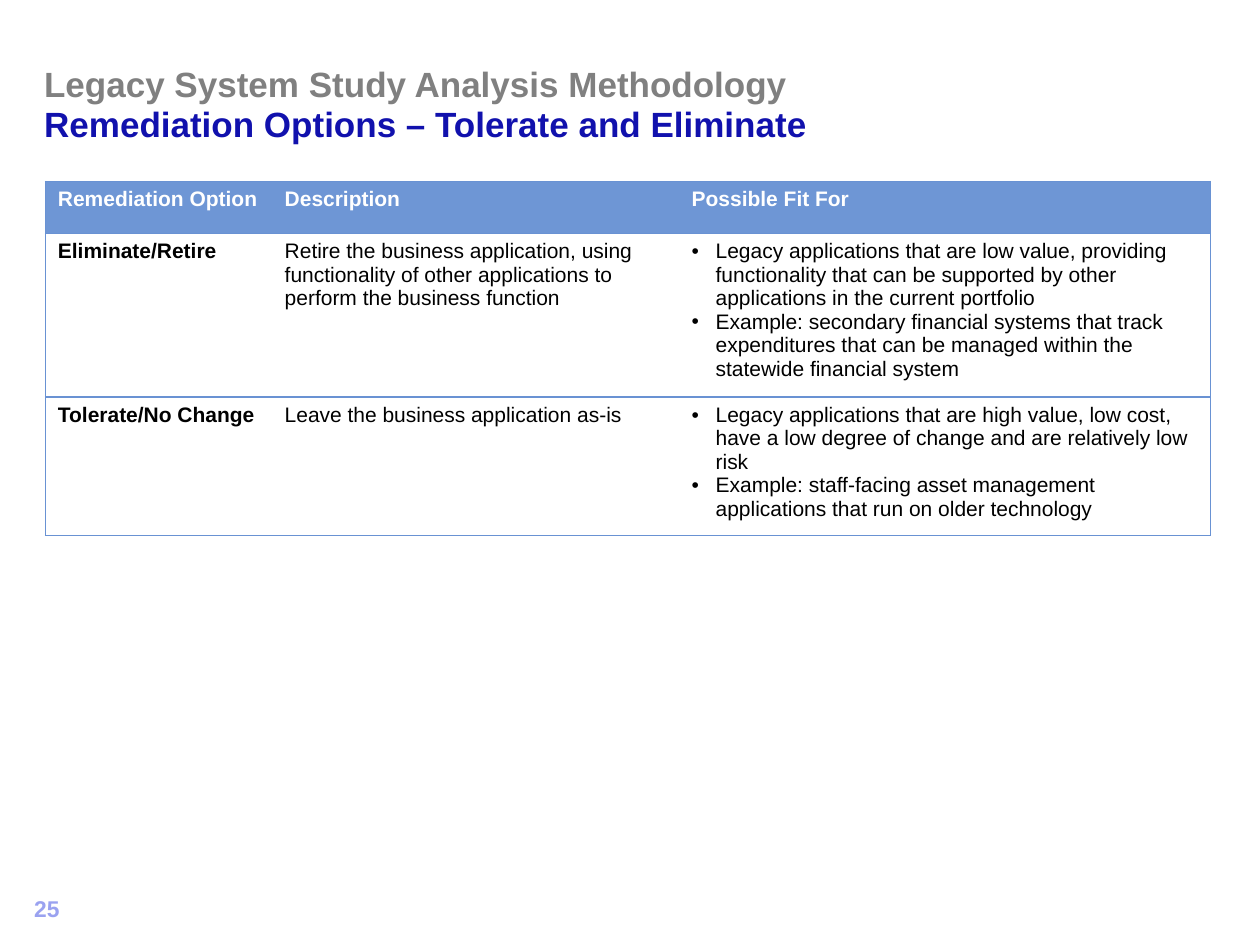
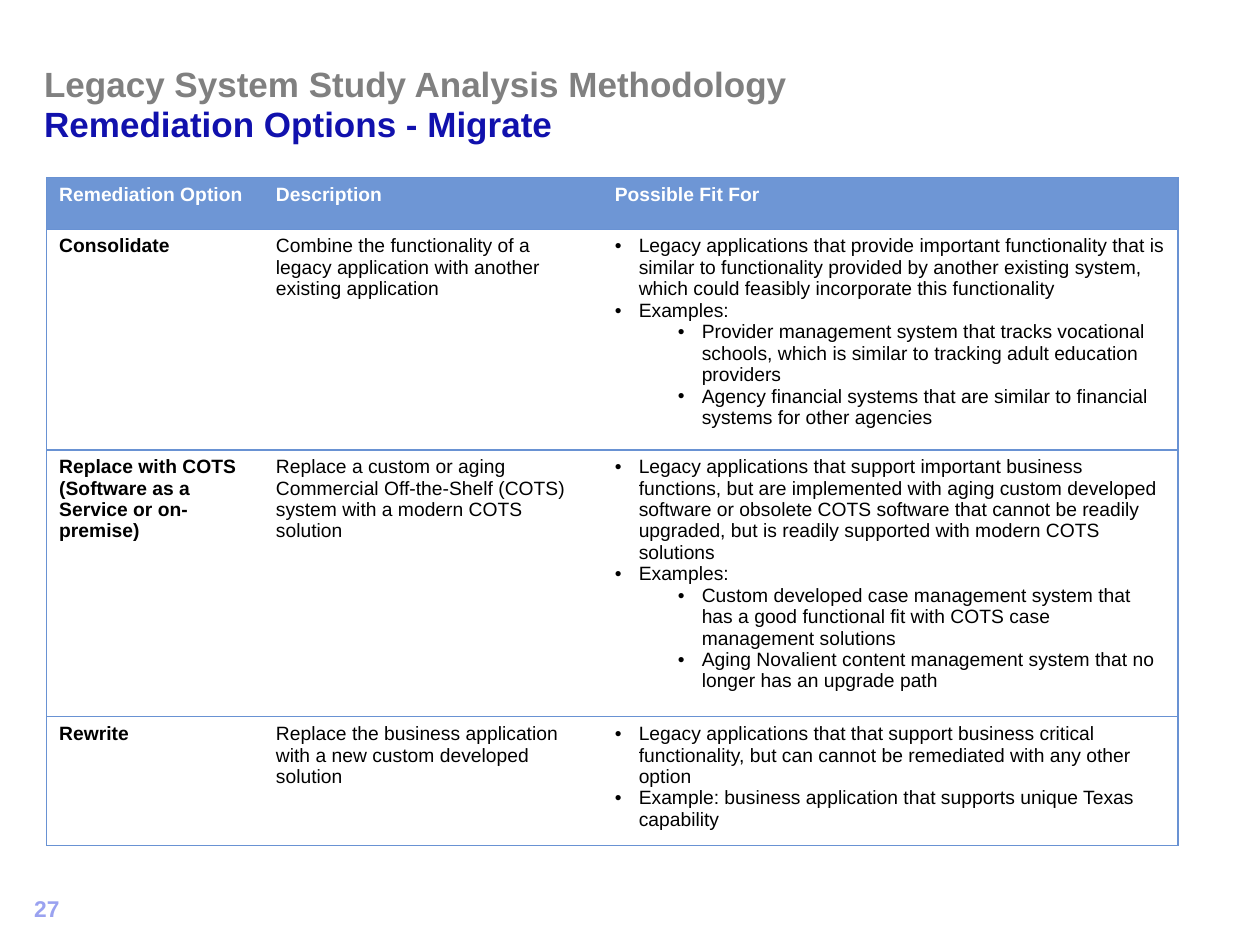
from lxml.etree import SubElement
from pptx import Presentation
from pptx.dml.color import RGBColor
from pptx.enum.text import MSO_ANCHOR, PP_ALIGN
from pptx.oxml.ns import qn
from pptx.util import Inches, Pt

FONT = "Arial"
GREY, NAVY, LILAC = "808080", "1111AD", "9AA2F0"
BAND, RULE, BLACK, WHITE = "6E96D5", "6992D3", "000000", "FFFFFF"
TOPIC = "Legacy System Study Analysis Methodology"
HEADS = ["Remediation Option", "Description", "Possible Fit For"]

# Each fit is a (level, text) pair.
KEEP_ROWS = [
    ("Eliminate/Retire",
     "Retire the business application, using functionality of other "
     "applications to perform the business function",
     [(0, "Legacy applications that are low value, providing functionality "
          "that can be supported by other applications in the current portfolio"),
      (0, "Example: secondary financial systems that track expenditures that "
          "can be managed within the statewide financial system")]),
    ("Tolerate/No Change",
     "Leave the business application as-is",
     [(0, "Legacy applications that are high value, low cost, have a low "
          "degree of change and are relatively low risk"),
      (0, "Example: staff-facing asset management applications that run on "
          "older technology")]),
]
MOVE_ROWS = [
    ("Consolidate",
     "Combine the functionality of a legacy application with another "
     "existing application",
     [(0, "Legacy applications that provide important functionality that is "
          "similar to functionality provided by another existing system, "
          "which could feasibly incorporate this functionality"),
      (0, "Examples:"),
      (1, "Provider management system that tracks vocational schools, which "
          "is similar to tracking adult education providers"),
      (1, "Agency financial systems that are similar to financial systems "
          "for other agencies")]),
    ("Replace with COTS (Software as a Service or on-premise)",
     "Replace a custom or aging Commercial Off-the-Shelf (COTS) system with "
     "a modern COTS solution",
     [(0, "Legacy applications that support important business functions, "
          "but are implemented with aging custom developed software or "
          "obsolete COTS software that cannot be readily upgraded, but is "
          "readily supported with modern COTS solutions"),
      (0, "Examples:"),
      (1, "Custom developed case management system that has a good "
          "functional fit with COTS case management solutions"),
      (1, "Aging Novalient content management system that no longer has an "
          "upgrade path")]),
    ("Rewrite",
     "Replace the business application with a new custom developed solution",
     [(0, "Legacy applications that that support business critical "
          "functionality, but can cannot be remediated with any other option"),
      (0, "Example: business application that supports unique Texas "
          "capability")]),
]


def tint(color, value):
    color.rgb = RGBColor.from_string(value)


def add_run(para, text, size, color, bold=False):
    run = para.add_run()
    run.text = text
    font = run.font
    font.name, font.size, font.bold = FONT, Pt(size), bold
    tint(font.color, color)


def add_title(slide, topic, box):
    title = slide.shapes.title
    title.left, title.top, title.width, title.height = map(Inches, box)
    frame = title.text_frame
    frame.vertical_anchor = MSO_ANCHOR.MIDDLE
    para = frame.paragraphs[0]
    para.alignment = PP_ALIGN.LEFT
    para.line_spacing = 0.97
    add_run(para, TOPIC, 20, GREY, True)
    para.add_line_break()
    add_run(para, topic, 20, NAVY, True)


def add_number(slide, number, box):
    frame = slide.shapes.add_textbox(*map(Inches, box)).text_frame
    frame.word_wrap = True
    frame.margin_top = Inches(0.02)
    para = frame.paragraphs[0]
    para.alignment = PP_ALIGN.RIGHT
    add_run(para, str(number), 13, LILAC, True)


def set_rules(cell, sides):
    """Draw the given sides of a cell and clear the others."""
    props = cell._tc.get_or_add_tcPr()
    for side in "LRTB":
        line = SubElement(props, qn(f"a:ln{side}"), w=str(Pt(0.75)))
        if side in sides:
            fill = SubElement(line, qn("a:solidFill"))
            SubElement(fill, qn("a:srgbClr"), val=RULE)
        else:
            SubElement(line, qn("a:noFill"))


def set_bullet(para, level):
    para.level = level
    props = para._p.get_or_add_pPr()
    props.set("marL", str(Inches(0.19 + 0.5 * level)))
    props.set("indent", str(Inches(-0.19)))
    color = SubElement(props, qn("a:buClr"))
    SubElement(color, qn("a:srgbClr"), val=BLACK)
    SubElement(props, qn("a:buFont"), typeface=FONT)
    SubElement(props, qn("a:buChar"), char="•")


def fill_cell(cell, content, size, color, bold):
    """Write plain text, or a list of bullets with their levels."""
    frame = cell.text_frame
    if isinstance(content, str):
        add_run(frame.paragraphs[0], content, size, color, bold)
        return
    for i, (level, text) in enumerate(content):
        para = frame.add_paragraph() if i else frame.paragraphs[0]
        set_bullet(para, level)
        add_run(para, text, size, color, bold)


def add_grid(slide, rows, left, top, widths, size):
    rows = [HEADS] + rows
    high = 0.41
    grid = slide.shapes.add_table(
        len(rows), len(widths), Inches(left), Inches(top),
        Inches(sum(widths)), Inches(high * len(rows))).table
    grid.horz_banding = False
    for col, width in zip(grid.columns, widths):
        col.width = Inches(width)
    for r, row in enumerate(rows):
        grid.rows[r].height = Inches(high)
        head = r == 0
        for c, content in enumerate(row):
            cell = grid.cell(r, c)
            set_rules(cell, "TB" + {0: "L", len(widths) - 1: "R"}.get(c, ""))
            cell.fill.solid()
            tint(cell.fill.fore_color, BAND if head else WHITE)
            fill_cell(cell, content, size, WHITE if head else BLACK,
                      head or c == 0)


def add_page(deck, topic, number, rows, left, top, widths, size):
    slide = deck.slides.add_slide(deck.slide_layouts[5])
    add_title(slide, topic, (0.25, 0.42, 9.5, 0.83))
    add_number(slide, number, (0, 7.08, 0.57, 0.38))
    add_grid(slide, rows, left, top, widths, size)


def main():
    deck = Presentation()
    deck.slide_width, deck.slide_height = Inches(10), Inches(7.5)
    add_page(deck, "Remediation Options – Tolerate and Eliminate", 25,
             KEEP_ROWS, 0.36, 1.44, [1.8, 3.23, 4.22], 12)
    add_page(deck, "Remediation Options - Migrate", 27,
             MOVE_ROWS, 0.37, 1.41, [1.72, 2.69, 4.57], 11)
    deck.save("out.pptx")


if __name__ == "__main__":
    main()
